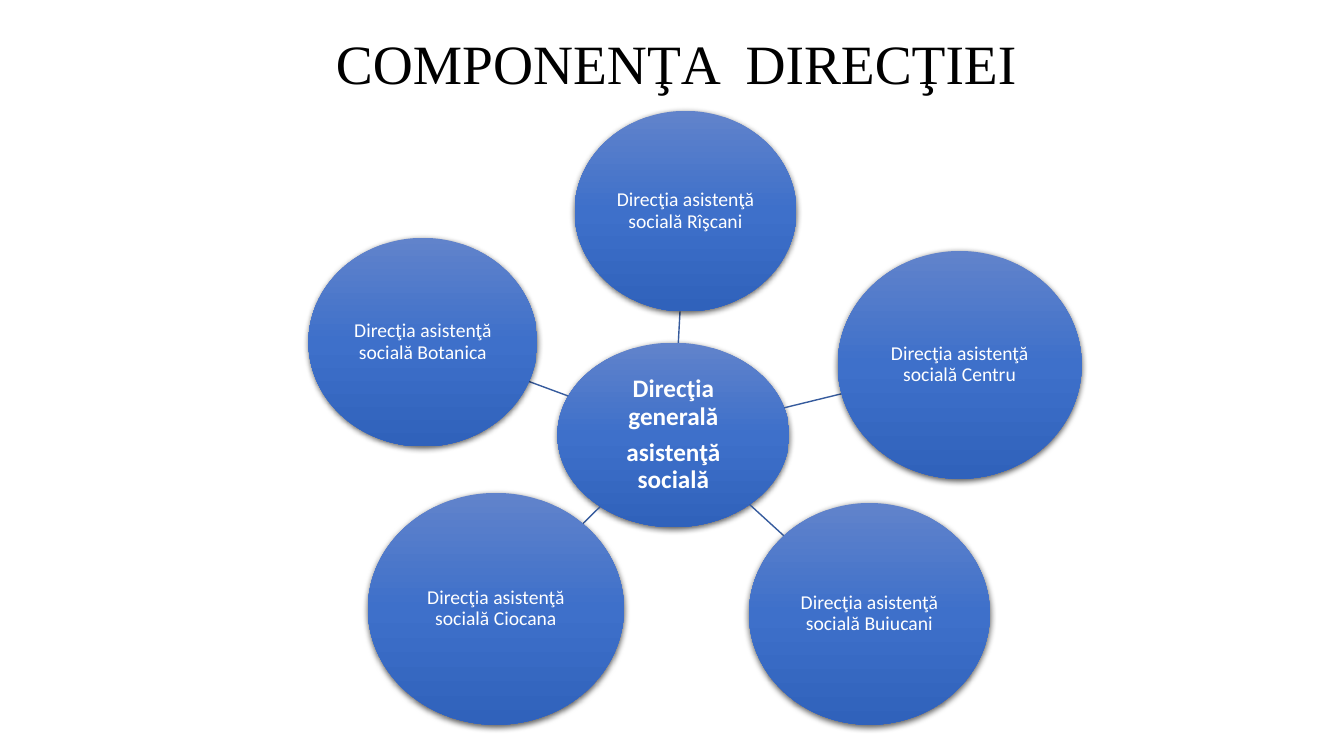
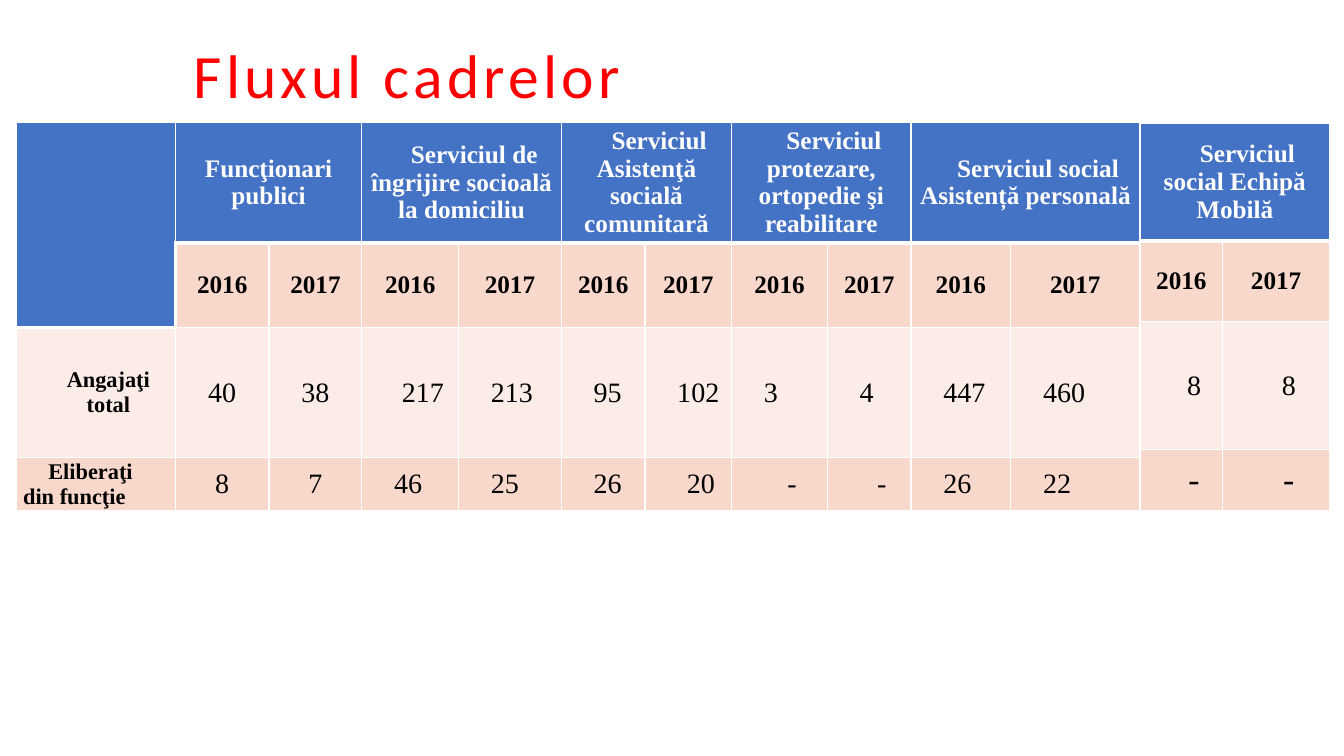
"""Builds two slides: the parts of a social care directorate and its staff flow."""
from math import hypot

from lxml.etree import SubElement
from pptx import Presentation
from pptx.dml.color import RGBColor
from pptx.enum.shapes import MSO_CONNECTOR, MSO_SHAPE
from pptx.enum.text import MSO_ANCHOR, MSO_AUTO_SIZE, PP_ALIGN
from pptx.oxml.ns import qn
from pptx.util import Inches, Pt

BLACK = RGBColor(0x00, 0x00, 0x00)
WHITE = RGBColor(0xFF, 0xFF, 0xFF)
RED = RGBColor(0xFF, 0x00, 0x00)
BLUE = RGBColor(0x44, 0x72, 0xC4)
LINK_BLUE = RGBColor(0x36, 0x5B, 0x9D)
PEACH = RGBColor(0xF9, 0xD8, 0xCC)
PALE_PEACH = RGBColor(0xFC, 0xEC, 0xE7)
GLOSS = (
    (0, RGBColor(0x61, 0x83, 0xCB)),
    (50, RGBColor(0x3E, 0x70, 0xCA)),
    (100, RGBColor(0x30, 0x62, 0xBB)),
)

SANS = "Calibri"
SERIF = "Times New Roman"
COLS, ROWS = 133.33, 75
YEARS = ("2016", "2017")
ALIGN = {
    "c": PP_ALIGN.CENTER,
    "i": PP_ALIGN.CENTER,
    "l": PP_ALIGN.LEFT,
    "j": PP_ALIGN.JUSTIFY,
}


class Deck:
    """Holds the style and the current slide."""

    def __init__(self):
        self.prs = Presentation()
        self.prs.slide_width = Inches(13.33)
        self.prs.slide_height = Inches(7.5)
        self.s = None

    def x(self, cols):
        return int(self.prs.slide_width * cols / COLS)

    def y(self, rows):
        return int(self.prs.slide_height * rows / ROWS)

    def box(self, c, r, w, h):
        return self.x(c), self.y(r), self.x(w), self.y(h)

    def style(self, p, size, color, font, bold=False):
        for r in p.runs:
            r.font.size = Pt(size)
            r.font.name = font
            r.font.bold = bold
            r.font.color.rgb = color

    def slide(self):
        self.s = self.prs.slides.add_slide(self.prs.slide_layouts[5])

    def title(self, text, box, size, color, font, align, anchor, spacing=0):
        sp = self.s.shapes.title
        sp.left, sp.top, sp.width, sp.height = self.box(*box)
        tf = sp.text_frame
        tf.text = text
        tf.word_wrap = True
        tf.auto_size = MSO_AUTO_SIZE.NONE
        tf.vertical_anchor = anchor
        p = tf.paragraphs[0]
        p.alignment = align
        p.line_spacing = 0.9
        self.style(p, size, color, font)
        for r in p.runs:
            r.font._element.set("spc", str(spacing * 100))

    def circle(self, c, r, w, h, lines, size, bold=False):
        sp = self.s.shapes.add_shape(MSO_SHAPE.OVAL, *self.box(c, r, w, h))
        sp.line.fill.background()
        self.gloss(sp)
        self.drop_shadow(sp)
        tf = sp.text_frame
        tf.text = "\n".join(lines)
        tf.word_wrap = True
        tf.vertical_anchor = MSO_ANCHOR.MIDDLE
        tf.margin_left = tf.margin_right = Inches(0.01)
        tf.margin_top = tf.margin_bottom = Inches(0.01)
        for p in tf.paragraphs:
            p.alignment = PP_ALIGN.CENTER
            p.line_spacing = 0.9
            p.space_after = Pt(0.35 * size)
            self.style(p, size, WHITE, SANS, bold)

    def gloss(self, sp):
        sp.fill.gradient()
        sp.fill.gradient_angle = 270
        stops = sp._element.spPr.find(".//" + qn("a:gsLst"))
        for gs in list(stops):
            stops.remove(gs)
        for pos, color in GLOSS:
            gs = SubElement(stops, qn("a:gs"), pos=str(pos * 1000))
            SubElement(gs, qn("a:srgbClr"), val=str(color))

    def drop_shadow(self, sp):
        sp.shadow.inherit = False
        effects = sp._element.spPr.find(qn("a:effectLst"))
        shadow = SubElement(
            effects, qn("a:outerShdw"), blurRad=str(Pt(4.5)), dist=str(Pt(1.5)),
            dir="5400000", algn="ctr", rotWithShape="0")
        color = SubElement(shadow, qn("a:srgbClr"), val=str(BLACK))
        SubElement(color, qn("a:alpha"), val="63000")

    def link(self, hub, spoke):
        """Draws the part of the centre line that lies between two ellipses."""
        (x1, y1), (x2, y2) = ((c + w / 2, r + h / 2) for c, r, w, h in (hub, spoke))
        dx, dy = x2 - x1, y2 - y1
        start, end = (
            1 / hypot(dx / (w / 2), dy / (h / 2)) for _, _, w, h in (hub, spoke))
        line = self.s.shapes.add_connector(
            MSO_CONNECTOR.STRAIGHT,
            self.x(x1 + dx * start), self.y(y1 + dy * start),
            self.x(x2 - dx * end), self.y(y2 - dy * end))
        line.line.color.rgb = LINK_BLUE
        line.line.width = Pt(1)
        SubElement(line._element.spPr, qn("a:effectLst"))

    def cell(self, cell, text, kind, size, color, bold):
        """Writes a cell; every kind but "c" has an indented first line."""
        plain = kind == "c"
        cell.vertical_anchor = MSO_ANCHOR.MIDDLE
        cell.margin_left = cell.margin_right = Inches(0.09 if plain else 0.07)
        cell.margin_top = cell.margin_bottom = Inches(0.05 if plain else 0)
        cell.text_frame.text = text
        for p in cell.text_frame.paragraphs:
            p.alignment = ALIGN[kind]
            if not plain:
                p._p.get_or_add_pPr().set("indent", str(Inches(0.25)))
            self.style(p, size, color, SERIF, bold)

    def borders(self, cell, heavy):
        tcPr = cell._tc.get_or_add_tcPr()
        for side in "LRTB":
            width = Pt(3 if side in heavy else 1)
            ln = SubElement(tcPr, qn("a:ln" + side), w=str(width))
            fill = SubElement(ln, qn("a:solidFill"))
            SubElement(fill, qn("a:srgbClr"), val=str(WHITE))

    def table(self, c, r, widths, heights, heads, rows, labels=()):
        """Draws a table with two year columns under each head."""
        first = 1 if labels else 0
        frame = self.s.shapes.add_table(
            len(heights), len(widths), *self.box(c, r, sum(widths), sum(heights)))
        tbl = frame.table
        tbl.first_row = tbl.horz_banding = False
        for col, width in zip(tbl.columns, widths):
            col.width = self.x(width)
        for row, height in zip(tbl.rows, heights):
            row.height = self.y(height)

        for i, fill in enumerate((BLUE, PEACH, PALE_PEACH, PEACH)):
            for j in range(len(widths)):
                last_head = 1 if j < first else 0
                heavy = "B" if i == last_head else "T" if i == last_head + 1 else ""
                if first and (i, j) == (1, 1):
                    heavy += "L"
                cell = tbl.cell(i, j)
                self.borders(cell, heavy)
                cell.fill.solid()
                cell.fill.fore_color.rgb = BLUE if i <= last_head else fill

        if labels:
            tbl.cell(0, 0).merge(tbl.cell(1, 0))
        for i, (text, kind) in enumerate(labels, 2):
            self.cell(tbl.cell(i, 0), text, kind, 16, BLACK, True)
        for n, (text, kind) in enumerate(heads):
            j = first + 2 * n
            tbl.cell(0, j).merge(tbl.cell(0, j + 1))
            self.cell(tbl.cell(0, j), text, kind, 18, WHITE, True)
            for k, year in enumerate(YEARS):
                self.cell(tbl.cell(1, j + k), year, "c", 18, BLACK, True)
        for i, (values, kinds, size) in enumerate(rows, 2):
            for j, (text, kind) in enumerate(zip(values.split(), kinds), first):
                self.cell(tbl.cell(i, j), text, kind, size, BLACK, False)


def structure(deck):
    deck.slide()
    deck.title("COMPONENŢA  DIRECŢIEI", (22.1, 3.1, 90, 12.5), 39.6, BLACK,
               SERIF, PP_ALIGN.CENTER, MSO_ANCHOR.TOP)
    hub = (55.3, 34, 23, 18.3)
    deck.circle(*hub, ("Direcţia generală", "asistenţă socială"), 18, True)
    sectors = {
        "Rîşcani": (57, 11, 22, 19.9),
        "Centru": (83.1, 24.9, 24.2, 22.6),
        "Buiucani": (74.3, 49.9, 23.9, 22),
        "Ciocana": (36.5, 48.9, 25.4, 23),
        "Botanica": (30.6, 23.6, 22.7, 20.7),
    }
    for name, place in sectors.items():
        deck.link(hub, place)
        deck.circle(*place, (f"Direcţia asistenţă socială {name}",), 14)


def staff_flow(deck):
    deck.slide()
    deck.title("Fluxul cadrelor", (18.2, 2.3, 89.5, 10.9), 44, RED, SANS,
               PP_ALIGN.LEFT, MSO_ANCHOR.MIDDLE, 3)
    deck.table(
        1.6, 12.1,
        (15.8, 9.3, 9.2, 9.6, 10.2, 8.3, 8.6, 9.5, 8.3, 9.9, 12.8),
        (12, 8.4, 12.9, 5.3),
        (("Funcţionari publici", "c"),
         ("Serviciul de îngrijire socioală la domiciliu", "i"),
         ("Serviciul Asistenţă socială comunitară", "i"),
         ("Serviciul protezare, ortopedie şi reabilitare", "i"),
         ("Serviciul social Asistență personală", "i")),
        (("40 38 217 213 95 102 3 4 447 460", "ccilllllll", 20),
         ("8 7 46 25 26 20 - - 26 22", "ccllliiill", 20)),
        (("Angajaţi\ntotal", "i"), ("Eliberaţi din funcţie", "j")))
    deck.table(
        113.1, 12.2, (8.2, 10.6), (11.7, 8, 12.7, 6.1),
        (("Serviciul social Echipă Mobilă", "i"),),
        (("8 8", "ii", 20), ("- -", "ii", 24)))


def main():
    deck = Deck()
    structure(deck)
    staff_flow(deck)
    deck.prs.save("out.pptx")


if __name__ == "__main__":
    main()
